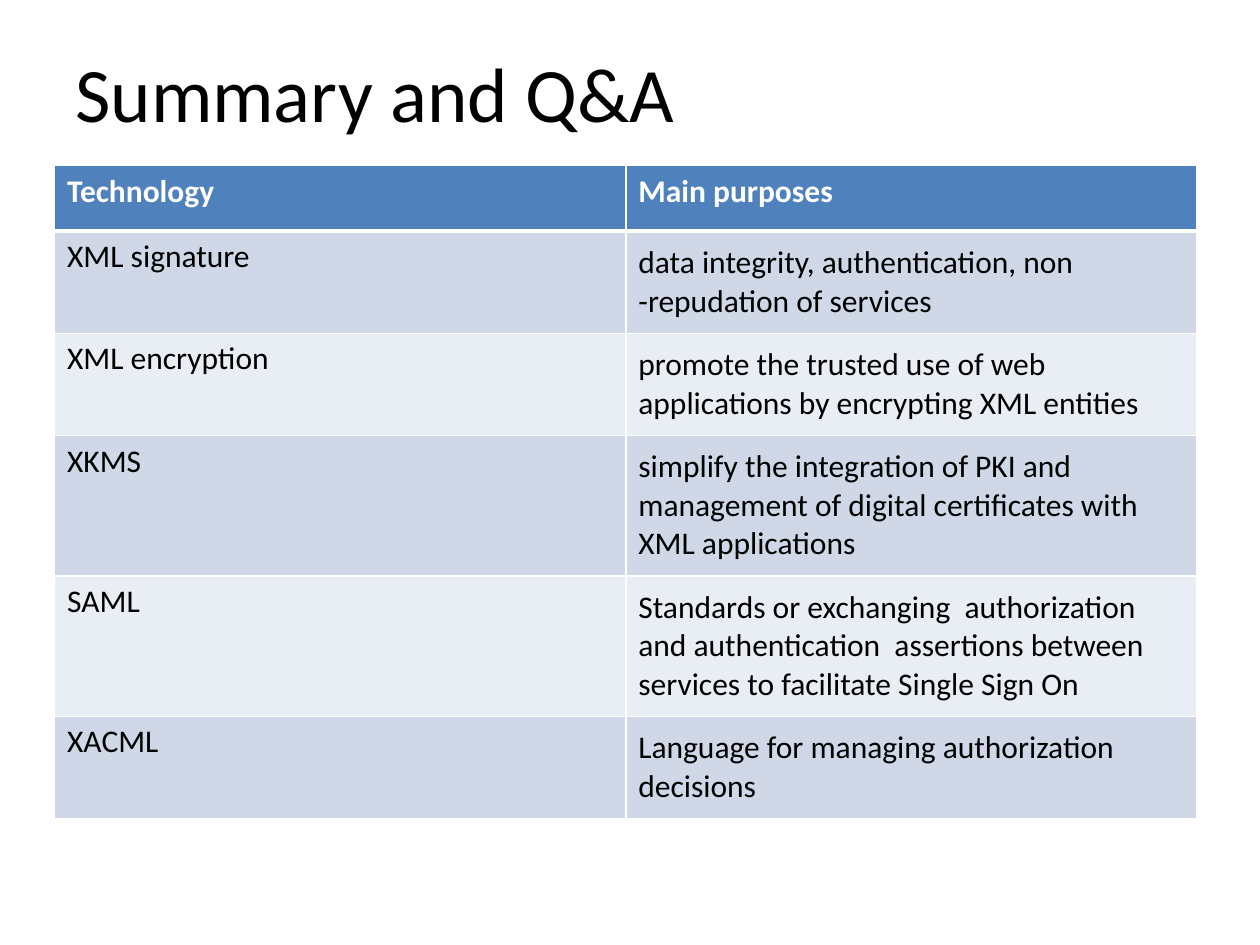
from lxml import etree
from pptx import Presentation
from pptx.dml.color import RGBColor
from pptx.enum.text import MSO_ANCHOR
from pptx.oxml.ns import qn
from pptx.util import Cm, Pt

MIDDLE = MSO_ANCHOR.MIDDLE
BLACK = RGBColor(0x00, 0x00, 0x00)
WHITE = RGBColor(0xFF, 0xFF, 0xFF)
HEADER_BLUE = RGBColor(0x4F, 0x81, 0xBD)
BAND_DARK = RGBColor(0xD0, 0xD8, 0xE8)
BAND_LIGHT = RGBColor(0xE9, 0xED, 0xF4)

HEADINGS = ("Technology", "Main purposes")
TECHNOLOGIES = (
    ("XML signature", "data integrity, authentication, non -repudation of services"),
    ("XML encryption", "promote the trusted use of web applications by encrypting XML entities"),
    ("XKMS", "simplify the integration of PKI and management of digital certificates with XML applications"),
    ("SAML", "Standards or exchanging  authorization and authentication  assertions between  "
             "services to facilitate Single Sign On"),
    ("XACML", "Language for managing authorization decisions"),
)
ROW_HEIGHTS = (1.32, 2.06, 2.06, 2.83, 2.83, 2.06)


class SlideBuilder:
    """Holds the style and the current slide, and adds its elements."""

    font_name = "Calibri"
    title_format = {"size": Pt(44), "bold": False}
    header_format = {"size": Pt(18), "bold": True}
    body_format = {"size": Pt(18), "bold": False}

    def __init__(self, page):
        self.page = page

    def add_text(self, frame, text, values, color):
        span = frame.paragraphs[0].add_run()
        span.text = text
        for name, value in {"name": self.font_name, **values}.items():
            setattr(span.font, name, value)
        span.font.color.rgb = color

    def title(self, text, left, top, width, height):
        box = self.page.shapes.add_textbox(Cm(left), Cm(top), Cm(width), Cm(height))
        frame = box.text_frame
        for name, value in {"word_wrap": True, "vertical_anchor": MIDDLE}.items():
            setattr(frame, name, value)
        self.add_text(frame, text, self.title_format, BLACK)

    def border(self, cell, side, width):
        properties = cell._tc.get_or_add_tcPr()
        line = etree.SubElement(properties, qn(f"a:ln{side}"), w=str(Pt(width)))
        fill = etree.SubElement(line, qn("a:solidFill"))
        etree.SubElement(fill, qn("a:srgbClr"), val=str(WHITE))

    def cell(self, cell, text, row, column):
        is_header = row == 0
        padding = Cm(0.25) if column and not is_header else Cm(0.13)
        for name, value in {"margin_top": padding, "margin_bottom": padding}.items():
            setattr(cell, name, value)
        widths = {"L": 1, "R": 1, "T": 3 if row == 1 else 1, "B": 3 if is_header else 1}
        for side, width in widths.items():
            self.border(cell, side, width)
        cell.fill.solid()
        if is_header:
            cell.fill.fore_color.rgb = HEADER_BLUE
            self.add_text(cell.text_frame, text, self.header_format, WHITE)
        else:
            cell.fill.fore_color.rgb = BAND_DARK if row % 2 else BAND_LIGHT
            self.add_text(cell.text_frame, text, self.body_format, BLACK)

    def table(self, rows, heights, left, top, width):
        frame = self.page.shapes.add_table(
            len(rows), len(rows[0]), Cm(left), Cm(top), Cm(width), Cm(sum(heights)))
        table = frame.table
        for row, (texts, height) in enumerate(zip(rows, heights)):
            table.rows[row].height = Cm(height)
            for column, text in enumerate(texts):
                self.cell(table.cell(row, column), text, row, column)


def main():
    deck = Presentation()
    deck.slide_width, deck.slide_height = Cm(25.4), Cm(19.05)
    builder = SlideBuilder(deck.slides.add_slide(deck.slide_layouts[6]))
    builder.title("Summary and Q&A", 1.27, 0.76, 22.86, 2.16)
    builder.table((HEADINGS, *TECHNOLOGIES), ROW_HEIGHTS, 1.1, 3.34, 23.03)
    deck.save("out.pptx")


if __name__ == "__main__":
    main()
